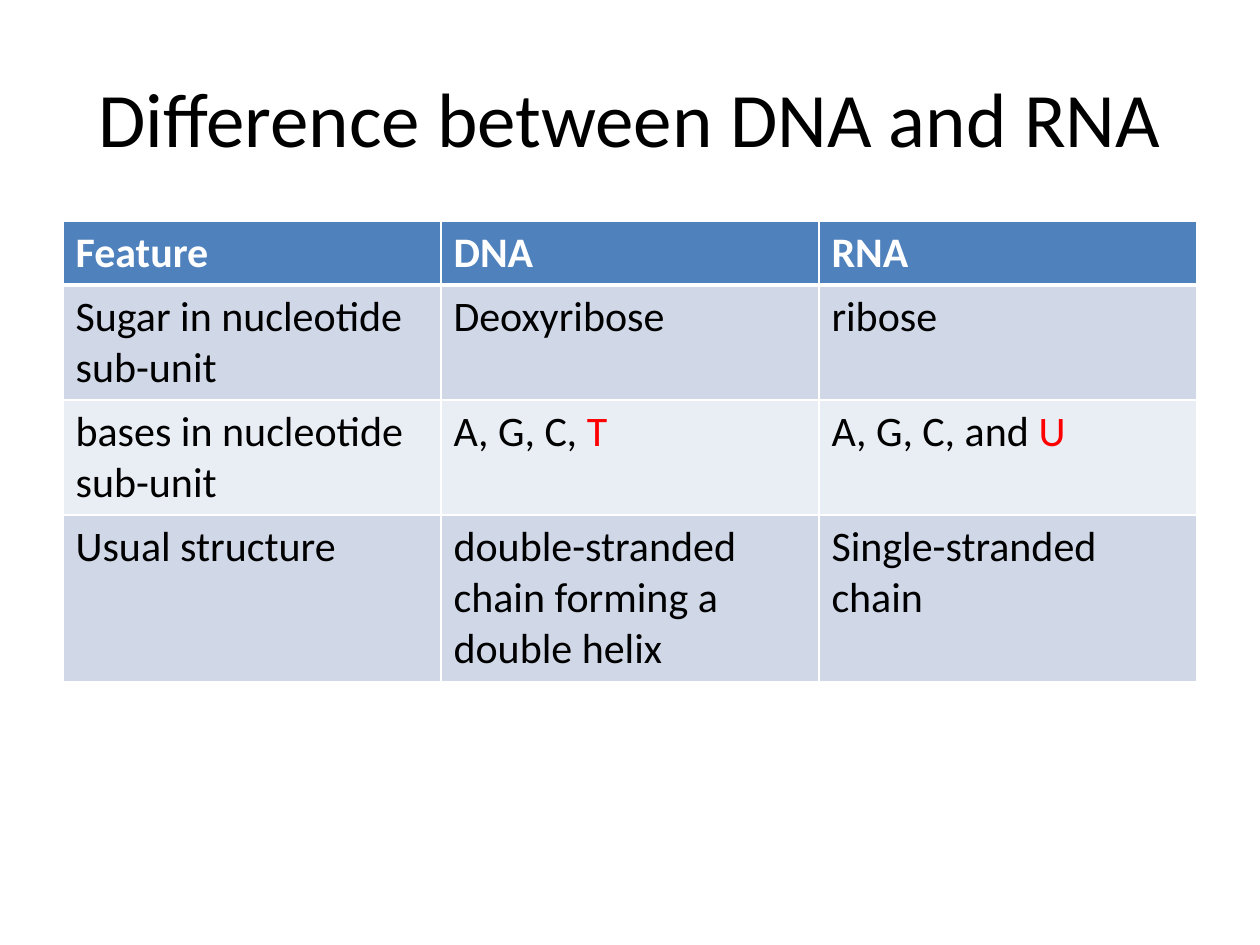
from dataclasses import dataclass

from lxml import etree
from pptx import Presentation
from pptx.dml.color import RGBColor
from pptx.enum.text import MSO_ANCHOR, PP_ALIGN
from pptx.oxml.ns import qn
from pptx.util import Emu, Pt

CENTER = PP_ALIGN.CENTER
MIDDLE = MSO_ANCHOR.MIDDLE
PX = 914400 // 126  # EMU in one px
FONT = "Calibri"
BLACK, WHITE, RED = "000000", "FFFFFF", "FF0000"
HEADER_FILL, DARK_BAND, LIGHT_BAND = "4F81BD", "D0D8E8", "E9EDF4"
THIN, THICK = 1, 3  # border widths in points


@dataclass(frozen=True)
class Entry:
    text: str
    highlight: str = ""  # closing letters shown in red


@dataclass(frozen=True)
class Row:
    height: int
    fill: str
    entries: tuple[Entry, ...]


ROWS = (
    Row(63, HEADER_FILL, (Entry("Feature"), Entry("DNA"), Entry("RNA"))),
    Row(115, DARK_BAND, (Entry("Sugar in nucleotide sub-unit"),
                         Entry("Deoxyribose"), Entry("ribose"))),
    Row(115, LIGHT_BAND, (Entry("bases in nucleotide sub-unit"),
                          Entry("A, G, C, ", "T"), Entry("A, G, C, and ", "U"))),
    Row(166, DARK_BAND, (Entry("Usual structure"),
                         Entry("double-stranded chain forming a double helix"),
                         Entry("Single-stranded chain"))),
)


def px(length: int) -> Emu:
    return Emu(length * PX)


def rgb(color: str) -> RGBColor:
    return RGBColor.from_string(color)


def add_text(paragraph, text: str, size: int, color: str, bold: bool = False) -> None:
    run = paragraph.add_run()
    run.text = text
    for attribute, value in {"name": FONT, "size": Pt(size), "bold": bold}.items():
        setattr(run.font, attribute, value)
    run.font.color.rgb = rgb(color)


def add_borders(cell, top: int, bottom: int) -> None:
    properties = cell._tc.get_or_add_tcPr()
    for side, width in {"lnL": THIN, "lnR": THIN, "lnT": top, "lnB": bottom}.items():
        line = etree.SubElement(properties, qn(f"a:{side}"), w=str(Pt(width)))
        fill = etree.SubElement(line, qn("a:solidFill"))
        etree.SubElement(fill, qn("a:srgbClr"), val=WHITE)


def draw_title(slide, text: str) -> None:
    title = slide.shapes.title
    bounds = {"left": 63, "top": 38, "width": 1134, "height": 157}
    for attribute, value in bounds.items():
        setattr(title, attribute, px(value))
    title.text_frame.vertical_anchor = MIDDLE
    paragraph = title.text_frame.paragraphs[0]
    paragraph.alignment = CENTER
    add_text(paragraph, text, 44, BLACK)


def draw_comparison(slide, rows: tuple[Row, ...]) -> None:
    height = sum(row.height for row in rows)
    table = slide.shapes.add_table(len(rows), len(rows[0].entries), px(63), px(221),
                                   px(1134), px(height)).table
    for index, row in enumerate(rows):
        is_header = index == 0
        table.rows[index].height = px(row.height)
        for column, entry in enumerate(row.entries):
            cell = table.cell(index, column)
            # The heavy rule lies between the header and the first feature
            add_borders(cell, THICK if index == 1 else THIN, THICK if is_header else THIN)
            cell.fill.solid()
            cell.fill.fore_color.rgb = rgb(row.fill)
            paragraph = cell.text_frame.paragraphs[0]
            add_text(paragraph, entry.text, 24, WHITE if is_header else BLACK, is_header)
            if entry.highlight:
                add_text(paragraph, entry.highlight, 24, RED)


def main() -> None:
    presentation = Presentation()
    presentation.slide_width, presentation.slide_height = px(1260), px(945)
    slide = presentation.slides.add_slide(presentation.slide_layouts[5])  # title only
    draw_title(slide, "Difference between DNA and RNA")
    draw_comparison(slide, ROWS)
    presentation.save("out.pptx")


if __name__ == "__main__":
    main()
